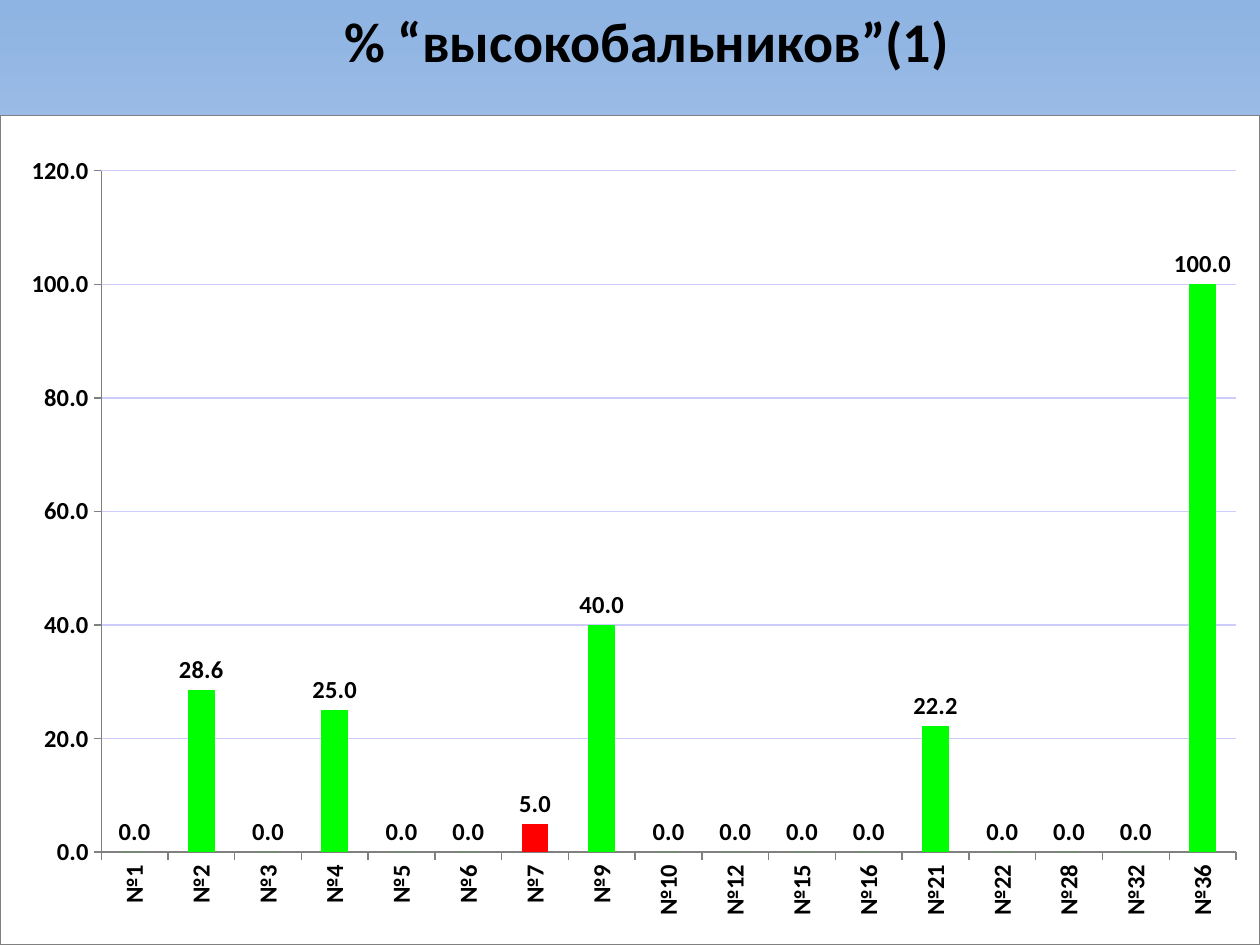
from lxml.etree import SubElement
from pptx import Presentation
from pptx.chart.data import CategoryChartData
from pptx.dml.color import RGBColor
from pptx.enum.chart import XL_CHART_TYPE as ChartType, XL_LABEL_POSITION as LabelPosition
from pptx.enum.chart import XL_TICK_MARK as TickMark
from pptx.enum.text import MSO_ANCHOR as Anchor, MSO_AUTO_SIZE as AutoSize, PP_ALIGN as Align
from pptx.oxml import parse_xml
from pptx.oxml.ns import nsdecls, qn
from pptx.util import Inches, Pt

WIDTH, HEIGHT = Inches(10), Inches(7.5)
GREY, GREEN, RED = "808080", "00FF00", "FF0000"
SCHOOLS = [1, 2, 3, 4, 5, 6, 7, 9, 10, 12, 15, 16, 21, 22, 28, 32, 36]
SHARES = {2: 28.6, 4: 25, 7: 5, 9: 40, 21: 22.2, 36: 100}
HIGHLIGHT = 7
BACKGROUND = {0: "8EB4E3", 50: "C2D1ED", 100: "E1E8F5"}
PLOT = {"x": 0.025, "y": 0.048, "w": 0.956, "h": 0.917}
TITLE_FONT = {"name": "Calibri", "size": Pt(32), "bold": True}
CHART_FONT = {"name": "Calibri", "size": Pt(14), "bold": True}


def color(value):
    """Turn a hex string into a colour."""
    return RGBColor.from_string(value)


def apply_format(target, values):
    """Set every attribute named in a dict of format values."""
    for name, value in values.items():
        setattr(target, name, value)


def style_font(font, values):
    """Give a font its format values in black."""
    apply_format(font, values)
    font.color.rgb = color("000000")


def paint(fill, value):
    """Fill an area with one solid colour."""
    fill.solid()
    fill.fore_color.rgb = color(value)


def style_line(line, value):
    """Draw a hairline in one colour."""
    line.color.rgb = color(value)
    line.width = Pt(0)


def paint_background(page):
    """Fill the page with a vertical gradient."""
    fill = page.background.fill
    fill.gradient()
    fill.gradient_angle = 270
    stops = page.background._cSld.find(".//" + qn("a:gsLst"))
    for stop in list(stops):
        stops.remove(stop)
    for position, value in BACKGROUND.items():
        stop = SubElement(stops, qn("a:gs"), pos=str(position * 1000))
        SubElement(stop, qn("a:srgbClr"), val=value)


def add_title(page, text):
    """Put the heading in the title placeholder."""
    box = page.shapes.title
    apply_format(box, {"left": Inches(2.56), "top": 0,
                       "width": Inches(5.15), "height": Inches(0.64)})
    frame = box.text_frame
    apply_format(frame, {"word_wrap": False, "auto_size": AutoSize.NONE,
                         "vertical_anchor": Anchor.MIDDLE})
    para = frame.paragraphs[0]
    para.alignment = Align.CENTER
    span = para.add_run()
    span.text = text
    style_font(span.font, TITLE_FONT)


def style_axis(axis):
    """Format an axis line, its ticks and its labels."""
    apply_format(axis, {"major_tick_mark": TickMark.OUTSIDE, "minor_tick_mark": TickMark.NONE})
    style_line(axis.format.line, GREY)
    style_font(axis.tick_labels.font, CHART_FONT)


def style_axes(chart):
    """Format both axes, the scale and the gridlines."""
    categories, values = chart.category_axis, chart.value_axis
    for axis in (categories, values):
        style_axis(axis)
    categories.has_major_gridlines = False
    categories._element.find(".//" + qn("a:bodyPr")).set("rot", "-5400000")
    apply_format(values, {"minimum_scale": 0, "maximum_scale": 120,
                          "major_unit": 20, "has_major_gridlines": True})
    apply_format(values.tick_labels, {"number_format": "0.0", "number_format_is_linked": False})
    style_line(values.major_gridlines.format.line, "CCCCFF")


def style_columns(chart):
    """Colour the columns and label them with their values."""
    plot = chart.plots[0]
    apply_format(plot, {"gap_width": 150, "vary_by_categories": False, "has_data_labels": True})
    labels = plot.data_labels
    apply_format(labels, {"show_value": True, "number_format": "0.0",
                          "number_format_is_linked": False,
                          "position": LabelPosition.OUTSIDE_END})
    style_font(labels.font, CHART_FONT)
    series = plot.series[0]
    series.invert_if_negative = False
    paint(series.format.fill, GREEN)
    paint(series.points[SCHOOLS.index(HIGHLIGHT)].format.fill, RED)


def place_plot(chart):
    """Place the plot area by shares of the chart's size."""
    area = chart._chartSpace.chart.plotArea
    for old in area.findall(qn("c:layout")):
        area.remove(old)
    layout = parse_xml(f"<c:layout {nsdecls('c')}/>")
    manual = SubElement(layout, qn("c:manualLayout"))
    settings = {"layoutTarget": "outer", "xMode": "edge", "yMode": "edge", **PLOT}
    for name, value in settings.items():
        SubElement(manual, qn("c:" + name), val=str(value))
    area.insert(0, layout)


def frame_chart(chart):
    """Give the chart a white ground and a grey border."""
    chart._chartSpace.chart.addnext(parse_xml(
        f'<c:spPr {nsdecls("c", "a")}><a:solidFill><a:srgbClr val="FFFFFF"/></a:solidFill>'
        f'<a:ln w="0"><a:solidFill><a:srgbClr val="{GREY}"/></a:solidFill></a:ln></c:spPr>'))


def add_share_chart(page):
    """Add the column chart of shares by school."""
    data = CategoryChartData(number_format="0.0")
    data.categories = [f"№{school}" for school in SCHOOLS]
    data.add_series("Series 1", [SHARES.get(school, 0) for school in SCHOOLS])
    top = Inches(0.92)
    chart = page.shapes.add_chart(
        ChartType.COLUMN_CLUSTERED, 0, top, WIDTH, HEIGHT - top, data).chart
    apply_format(chart, {"has_title": False, "has_legend": False})
    style_font(chart.font, {"name": "Calibri", "size": Pt(10)})
    style_axes(chart)
    style_columns(chart)
    place_plot(chart)
    frame_chart(chart)


def main():
    """Build the slide and save the deck."""
    deck = Presentation()
    apply_format(deck, {"slide_width": WIDTH, "slide_height": HEIGHT})
    page = deck.slides.add_slide(deck.slide_layouts.get_by_name("Title Only"))
    paint_background(page)
    add_title(page, "% “высокобальников”(1)")
    add_share_chart(page)
    deck.save("out.pptx")


if __name__ == "__main__":
    main()
